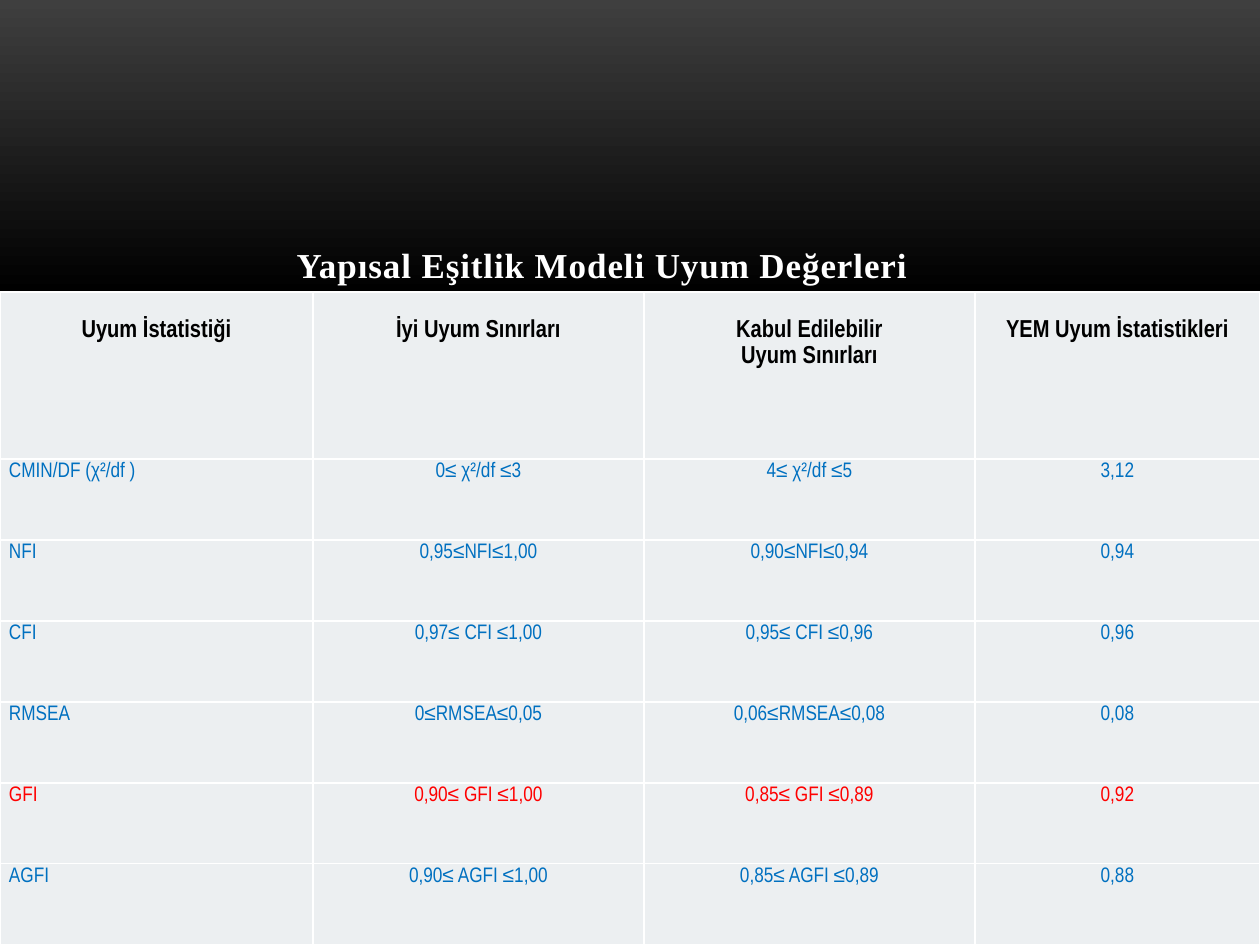
from lxml import etree
from pptx import Presentation
from pptx import util as u
from pptx.dml.color import RGBColor
from pptx.enum import text
from pptx.oxml.ns import qn

PX = 914400 // 126
WHITE, BLACK, BLUE, RED = "FFFFFF", "000000", "0070C0", "FF0000"
CELL_FILL = "ECEFF1"

TITLE = "Yapısal Eşitlik Modeli Uyum Değerleri"
COLUMN_WIDTHS = [313, 331, 331, 285]
HEADER_HEIGHT, ROW_HEIGHT = 167, 81
HEADER_DROP = 24  # lowers the headings by one line
HIGHLIGHTED = "GFI"
FIT_VALUES = [
    ["Uyum İstatistiği", "İyi Uyum Sınırları",
     "Kabul Edilebilir\nUyum Sınırları", "YEM Uyum İstatistikleri"],
    ["CMIN/DF (χ²/df )", "0≤ χ²/df ≤3", "4≤ χ²/df ≤5", "3,12"],
    ["NFI", "0,95≤NFI≤1,00", "0,90≤NFI≤0,94", "0,94"],
    ["CFI", "0,97≤ CFI ≤1,00", "0,95≤ CFI ≤0,96", "0,96"],
    ["RMSEA", "0≤RMSEA≤0,05", "0,06≤RMSEA≤0,08", "0,08"],
    ["GFI", "0,90≤ GFI ≤1,00", "0,85≤ GFI ≤0,89", "0,92"],
    ["AGFI", "0,90≤ AGFI ≤1,00", "0,85≤ AGFI ≤0,89", "0,88"],
]


def px(length):
    return u.Emu(length * PX)


def rgb(value):
    return RGBColor.from_string(value)


def apply(target, **values):
    for name, value in values.items():
        setattr(target, name, value)


def format_font(font, color, **values):
    apply(font, **values)
    font.color.rgb = rgb(color)


def paint_background(slide):
    fill = slide.background.fill
    fill.gradient()
    fill.gradient_angle = 270
    for stop, (position, color) in zip(fill.gradient_stops,
                                       [(0, "3F3F3F"), (0.31, BLACK)]):
        stop.position = position
        stop.color.rgb = rgb(color)


def add_title(slide):
    title = slide.shapes.title
    apply(title, left=px(35), top=px(203), width=px(1134), height=px(89))
    frame = title.text_frame
    apply(frame, vertical_anchor=text.MSO_ANCHOR.BOTTOM, word_wrap=True,
          auto_size=text.MSO_AUTO_SIZE.NONE)
    heading = frame.paragraphs[0]
    heading.alignment = text.PP_ALIGN.CENTER
    run = heading.add_run()
    run.text = TITLE
    format_font(run.font, WHITE, name="Times New Roman",
                size=u.Pt(20), bold=True)
    run.font._element.set("spc", "50")


def add_borders(cell):
    properties = cell._tc.get_or_add_tcPr()
    for side in ("a:lnL", "a:lnR", "a:lnT", "a:lnB"):
        line = etree.SubElement(properties, qn(side), w=str(u.Pt(1)))
        solid = etree.SubElement(line, qn("a:solidFill"))
        etree.SubElement(solid, qn("a:srgbClr"), val=WHITE)


def fill_cell(cell, words, color, size, bold, alignment, top):
    add_borders(cell)
    cell.fill.solid()
    cell.fill.fore_color.rgb = rgb(CELL_FILL)
    apply(cell, margin_left=px(9), margin_right=px(9),
          margin_top=px(top), margin_bottom=0)
    cell.text = words
    for paragraph in cell.text_frame.paragraphs:
        apply(paragraph, alignment=alignment, line_spacing=1.15)
        for run in paragraph.runs:
            format_font(run.font, color, name="Arial Narrow",
                        size=u.Pt(size), bold=bold)


def add_fit_table(slide):
    heights = [HEADER_HEIGHT] + [ROW_HEIGHT] * (len(FIT_VALUES) - 1)
    table = slide.shapes.add_table(
        len(heights), len(COLUMN_WIDTHS), 0, px(292),
        px(sum(COLUMN_WIDTHS)), px(sum(heights))).table
    for column, width in zip(table.columns, COLUMN_WIDTHS):
        column.width = px(width)
    for r, (values, height) in enumerate(zip(FIT_VALUES, heights)):
        table.rows[r].height = px(height)
        header = r == 0
        body_color = RED if values[0] == HIGHLIGHTED else BLUE
        for c, words in enumerate(values):
            centred = header or c > 0
            fill_cell(
                table.cell(r, c), words,
                color=BLACK if header else body_color,
                size=14 if header else 12, bold=header,
                alignment=text.PP_ALIGN.CENTER if centred else text.PP_ALIGN.LEFT,
                top=HEADER_DROP if header else 0)


def main():
    presentation = Presentation()
    apply(presentation, slide_width=u.Inches(10), slide_height=u.Inches(7.5))
    slide = presentation.slides.add_slide(presentation.slide_layouts[5])
    paint_background(slide)
    add_title(slide)
    add_fit_table(slide)
    presentation.save("out.pptx")


if __name__ == "__main__":
    main()
